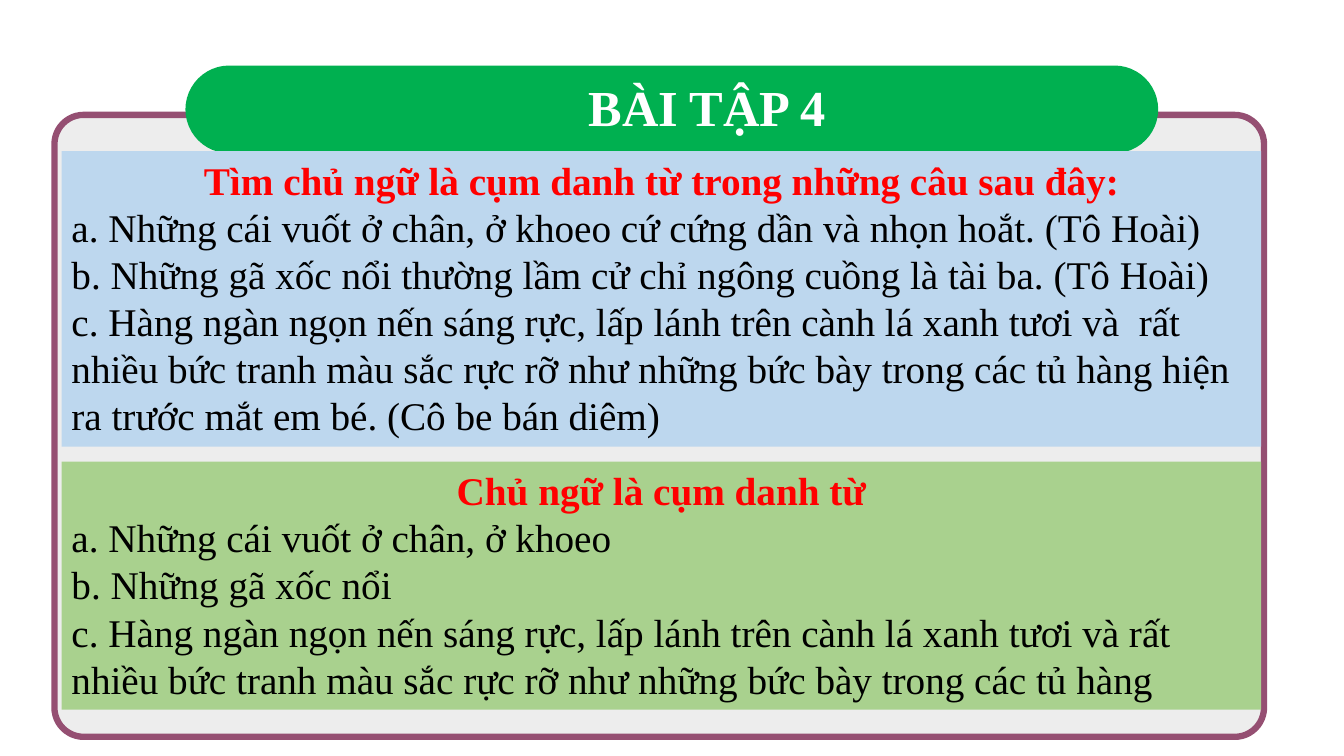
from dataclasses import dataclass

from pptx import Presentation
from pptx.dml.color import RGBColor
from pptx.enum.shapes import MSO_SHAPE as Preset
from pptx.enum.text import MSO_ANCHOR as Anchor, MSO_AUTO_SIZE as AutoSize, PP_ALIGN as Align
from pptx.shapes.autoshape import Shape
from pptx.slide import Slide
from pptx.util import Inches, Pt

WIDTH, HEIGHT = Inches(13.333), Inches(7.5)


@dataclass(frozen=True)
class Theme:
    font: str = "Times New Roman"
    title_size: float = 36
    body_size: float = 28
    border_width: float = 4.5
    white: str = "FFFFFF"
    black: str = "000000"
    heading: str = "FF0000"
    frame: str = "EDEDED"
    border: str = "954F72"
    banner: str = "00B050"
    question: str = "BDD7EE"
    answer: str = "A9D18E"


@dataclass(frozen=True)
class Area:
    """Left, top, width and height as percentages of the slide."""
    left: float
    top: float
    width: float
    height: float

    def lengths(self) -> tuple[int, int, int, int]:
        return (
            int(WIDTH * self.left / 100),
            int(HEIGHT * self.top / 100),
            int(WIDTH * self.width / 100),
            int(HEIGHT * self.height / 100),
        )


@dataclass(frozen=True)
class Panel:
    top: float
    height: float
    fill: str
    heading: str
    sentences: tuple[str, ...]


THEME = Theme()
FRAME = Area(4.05, 15.2, 90, 82.27)
BANNER = Area(13.8, 8.67, 72.38, 11.6)
TITLE = Area(43.05, 9.47, 19.35, 9.47)
PANEL_LEFT, PANEL_WIDTH = 4.58, 89.25

PANELS = (
    Panel(20, 39.07, THEME.question, "Tìm chủ ngữ là cụm danh từ trong những câu sau đây:", (
        "a. Những cái vuốt ở chân, ở khoeo cứ cứng dần và nhọn hoắt. (Tô Hoài)",
        "b. Những gã xốc nổi thường lầm cử chỉ ngông cuồng là tài ba. (Tô Hoài)",
        "c. Hàng ngàn ngọn nến sáng rực, lấp lánh trên cành lá xanh tươi và  rất "
        "nhiều bức tranh màu sắc rực rỡ như những bức bày trong các tủ hàng hiện "
        "ra trước mắt em bé. (Cô be bán diêm)",
    )),
    Panel(61.07, 32.8, THEME.answer, "Chủ ngữ là cụm danh từ", (
        "a. Những cái vuốt ở chân, ở khoeo",
        "b. Những gã xốc nổi",
        "c. Hàng ngàn ngọn nến sáng rực, lấp lánh trên cành lá xanh tươi và rất "
        "nhiều bức tranh màu sắc rực rỡ như những bức bày trong các tủ hàng",
    )),
)


def add_block(page: Slide, preset: Preset, area: Area, fill: str) -> Shape:
    block = page.shapes.add_shape(preset, *area.lengths())
    block.shadow.inherit = False
    block.fill.solid()
    block.fill.fore_color.rgb = RGBColor.from_string(fill)
    block.line.fill.background()
    return block


def write_line(box: Shape, index: int, text: str, size: float, color: str,
               bold: bool, align: Align) -> None:
    frame = box.text_frame
    para = frame.add_paragraph() if index else frame.paragraphs[0]
    para.text = text
    para.alignment = align
    para.font.name = THEME.font
    para.font.size = Pt(size)
    para.font.bold = bold
    para.font.color.rgb = RGBColor.from_string(color)


def add_frame(page: Slide) -> None:
    frame = add_block(page, Preset.ROUNDED_RECTANGLE, FRAME, THEME.frame)
    frame.adjustments[0] = 0.047
    frame.line.color.rgb = RGBColor.from_string(THEME.border)
    frame.line.width = Pt(THEME.border_width)


def add_title(page: Slide) -> None:
    banner = add_block(page, Preset.ROUNDED_RECTANGLE, BANNER, THEME.banner)
    banner.adjustments[0] = 0.5
    box = page.shapes.add_textbox(*TITLE.lengths())
    box.text_frame.word_wrap = False
    box.text_frame.auto_size = AutoSize.SHAPE_TO_FIT_TEXT
    write_line(box, 0, "BÀI TẬP 4", THEME.title_size, THEME.white, True, Align.JUSTIFY)


def add_panel(page: Slide, panel: Panel) -> None:
    area = Area(PANEL_LEFT, panel.top, PANEL_WIDTH, panel.height)
    box = add_block(page, Preset.RECTANGLE, area, panel.fill)
    box.text_frame.word_wrap = True
    box.text_frame.auto_size = AutoSize.SHAPE_TO_FIT_TEXT
    box.text_frame.vertical_anchor = Anchor.TOP
    write_line(box, 0, panel.heading, THEME.body_size, THEME.heading, True, Align.CENTER)
    for index, sentence in enumerate(panel.sentences, start=1):
        write_line(box, index, sentence, THEME.body_size, THEME.black, False, Align.LEFT)


def main() -> None:
    deck = Presentation()
    deck.slide_width, deck.slide_height = WIDTH, HEIGHT
    page = deck.slides.add_slide(deck.slide_layouts[6])
    add_frame(page)
    add_title(page)
    for panel in PANELS:
        add_panel(page, panel)
    deck.save("out.pptx")


if __name__ == "__main__":
    main()
